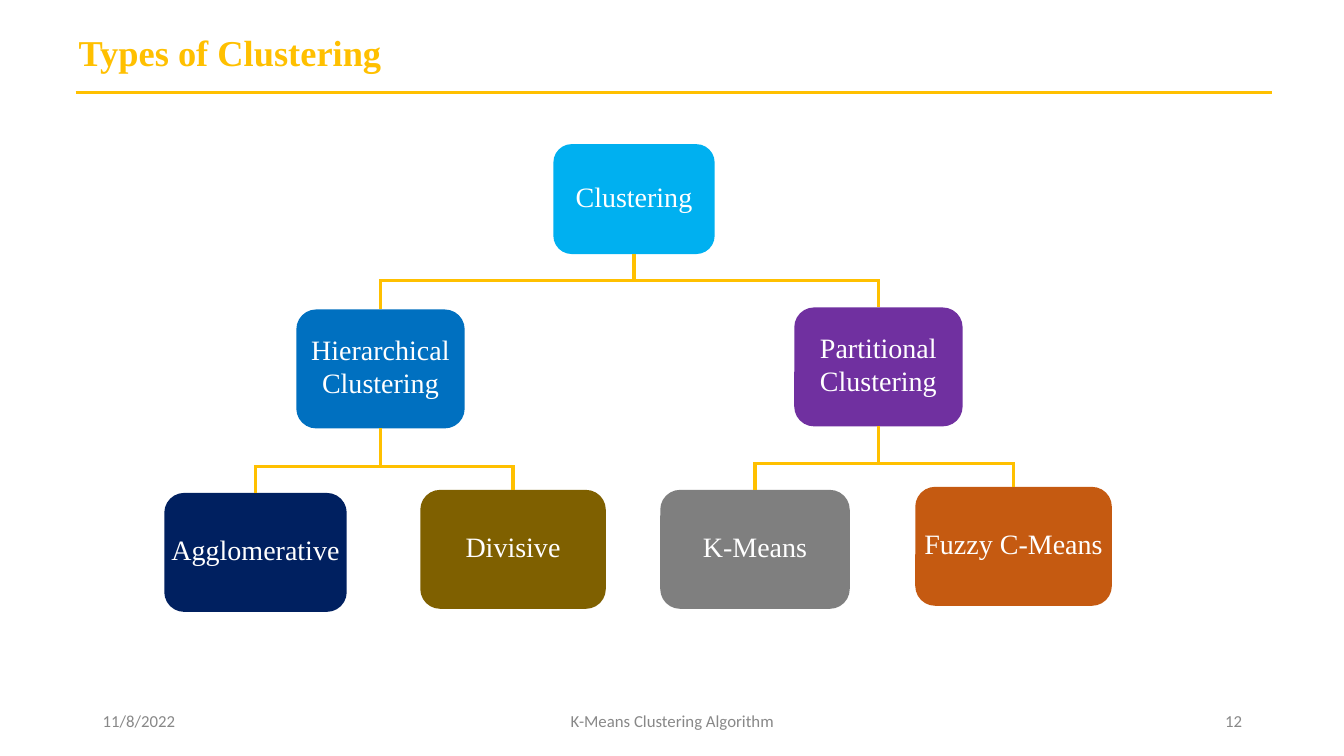
from dataclasses import dataclass
from typing import Optional

from lxml.etree import SubElement
from pptx import Presentation
from pptx.dml.color import RGBColor
from pptx.enum.shapes import MSO_CONNECTOR as Link, MSO_SHAPE as Form
from pptx.enum.text import MSO_ANCHOR as Anchor, PP_ALIGN as Align
from pptx.oxml.ns import qn
from pptx.util import Inches, Pt

CELL = Inches(0.1)
COLS, ROWS = 133.33, 75
SERIF, SANS = "Times New Roman", "Calibri"
HUES = {
    "gold": "FFC000", "white": "FFFFFF", "grey": "888888",
    "sky": "00B0F0", "blue": "0070C0", "plum": "7030A0",
    "navy": "002060", "olive": "7F6000", "stone": "7F7F7F", "rust": "C55A11",
}


@dataclass(frozen=True)
class Node:
    text: str
    col: float
    row: float
    wide: float
    high: float
    hue: str
    kids: tuple["Node", ...] = ()
    bar: float = 0


@dataclass(frozen=True)
class Note:
    text: str
    col: float
    wide: float
    align: Align


TREE = Node("Clustering", 54.9, 14.3, 16, 10.9, "sky", (
    Node("Hierarchical\nClustering", 29.4, 30.7, 16.7, 11.8, "blue", (
        Node("Agglomerative", 16.3, 48.9, 18.1, 11.8, "navy"),
        Node("Divisive", 41.7, 48.6, 18.4, 11.8, "olive"),
    ), 46.3),
    Node("Partitional\nClustering", 78.8, 30.5, 16.7, 11.8, "plum", (
        Node("K-Means", 65.5, 48.6, 18.8, 11.8, "stone"),
        Node("Fuzzy C-Means", 90.8, 48.3, 19.5, 11.8, "rust"),
    ), 46),
), 27.8)
NOTES = (
    Note("11/8/2022", 9.2, 30, Align.LEFT),
    Note("K-Means Clustering Algorithm", 44.2, 45, Align.CENTER),
    Note("12", 94.2, 30, Align.RIGHT),
)


def grid(*cells: float) -> list[int]:
    return [round(cell * CELL) for cell in cells]


def tint(hue: str) -> RGBColor:
    return RGBColor.from_string(HUES[hue])


def write(shape, text: str, size: float, face: str, hue: str,
          align: Align, anchor: Anchor, bold: bool = False) -> None:
    frame = shape.text_frame
    frame.text = text
    frame.vertical_anchor = anchor
    for para in frame.paragraphs:
        para.alignment = align
        for run in para.runs:
            run.font.size, run.font.name, run.font.bold = Pt(size), face, bold
            run.font.color.rgb = tint(hue)


def draw_line(slide, x: int, y: int, to_x: int, to_y: int,
              start: Optional[object] = None, end: Optional[object] = None) -> None:
    line = slide.shapes.add_connector(Link.STRAIGHT, x, y, to_x, to_y)
    line.line.color.rgb = tint("gold")
    line.line.width = Pt(2.25)
    SubElement(line._element.spPr, qn("a:effectLst"))
    if start is not None:
        line.begin_connect(start, 2)
    if end is not None:
        line.end_connect(end, 0)


def draw_node(slide, node: Node):
    box = slide.shapes.add_shape(
        Form.ROUNDED_RECTANGLE, *grid(node.col, node.row, node.wide, node.high))
    box.shadow.inherit = False
    box.fill.solid()
    box.fill.fore_color.rgb = tint(node.hue)
    box.line.fill.background()
    frame = box.text_frame
    frame.margin_left = frame.margin_right = frame.margin_top = 0
    frame.margin_bottom = grid(0.6)[0]
    frame.word_wrap = False
    write(box, node.text, 20, SERIF, "white", Align.CENTER, Anchor.MIDDLE)
    if node.kids:
        kids = [draw_node(slide, kid) for kid in node.kids]
        bar = grid(node.bar)[0]
        mids = [kid.left + kid.width // 2 for kid in kids]
        stem = box.left + box.width // 2
        half = Pt(2.25) // 2
        draw_line(slide, stem, box.top + box.height, stem, bar, start=box)
        draw_line(slide, mids[0] - half, bar, mids[-1] + half, bar)
        for kid, mid in zip(kids, mids):
            draw_line(slide, mid, bar, mid, kid.top, end=kid)
    return box


def draw_note(slide, note: Note) -> None:
    box = slide.shapes.add_textbox(*grid(note.col, 69.5, note.wide, 4))
    box.text_frame.word_wrap = True
    write(box, note.text, 12, SANS, "grey", note.align, Anchor.MIDDLE)


def main() -> None:
    deck = Presentation()
    deck.slide_width, deck.slide_height = grid(COLS, ROWS)
    slide = deck.slides.add_slide(deck.slide_layouts[5])
    title = slide.shapes.title
    title.left, title.top, title.width, title.height = grid(6.8, 2.5, 32.3, 5.4)
    title.text_frame.word_wrap = False
    write(title, "Types of Clustering", 26, SERIF, "gold",
          Align.LEFT, Anchor.TOP, True)
    draw_line(slide, *grid(7.5, 9.2, 126.2, 9.2))
    draw_node(slide, TREE)
    for note in NOTES:
        draw_note(slide, note)
    deck.save("out.pptx")


if __name__ == "__main__":
    main()
